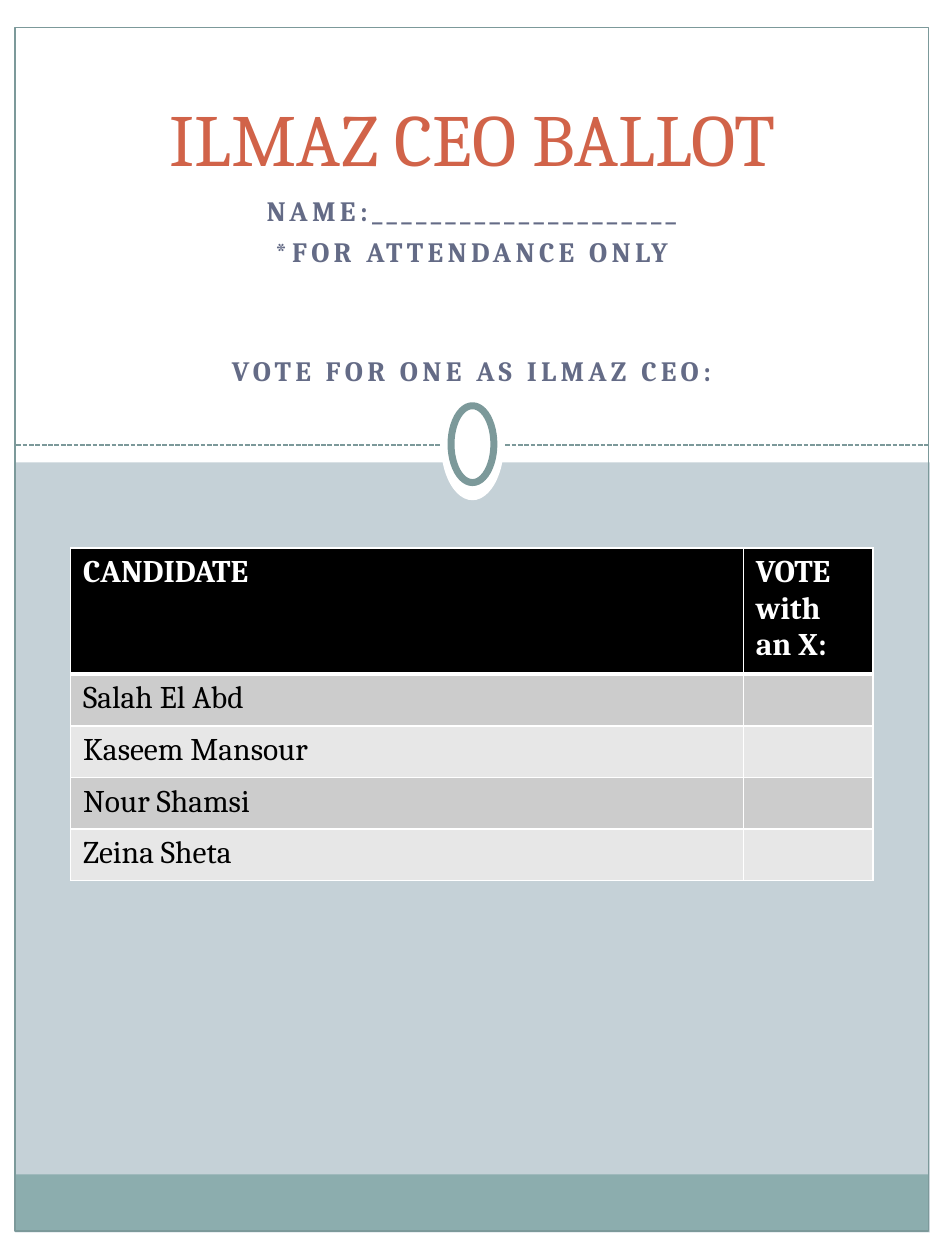
from lxml import etree
from pptx import Presentation
from pptx.dml.color import RGBColor
from pptx.enum.dml import MSO_LINE
from pptx.enum.shapes import MSO_CONNECTOR, MSO_SHAPE
from pptx.enum.text import MSO_ANCHOR, PP_ALIGN
from pptx.oxml.ns import qn
from pptx.util import Inches, Pt

RECT, OVAL = MSO_SHAPE.RECTANGLE, MSO_SHAPE.OVAL
STRAIGHT, DASH = MSO_CONNECTOR.STRAIGHT, MSO_LINE.SQUARE_DOT
TOP, BOTTOM = MSO_ANCHOR.TOP, MSO_ANCHOR.BOTTOM
CENTER = PP_ALIGN.CENTER

WHITE, BLACK = "FFFFFF", "000000"
SKY, TEAL, EDGE = "C5D1D7", "8CADAE", "7C999A"
RUST, SLATE = "D16349", "646B86"
BANDS = ("CCCCCC", "E7E7E7")


def color(code):
    return RGBColor.from_string(code)


class Page:
    font = "Cambria"

    def __init__(self, slide):
        self.slide = slide
        self.shapes = slide.shapes

    def back(self, code):
        fill = self.slide.background.fill
        fill.solid()
        fill.fore_color.rgb = color(code)

    def style(self, run, size, code, bold=False):
        look = {"name": self.font, "size": Pt(size), "bold": bold}
        for key, value in look.items():
            setattr(run.font, key, value)
        run.font.color.rgb = color(code)

    def shape(self, kind, box, fill=None, line=None, width=0):
        item = self.shapes.add_shape(kind, *map(Inches, box))
        item.shadow.inherit = False
        if fill:
            item.fill.solid()
            item.fill.fore_color.rgb = color(fill)
        else:
            item.fill.background()
        if line:
            item.line.color.rgb = color(line)
            item.line.width = Pt(width)
        else:
            item.line.fill.background()

    def rule(self, left, right, y, code, width):
        item = self.shapes.add_connector(
            STRAIGHT, Inches(left), Inches(y), Inches(right), Inches(y))
        item.line.color.rgb = color(code)
        item.line.width = Pt(width)
        item.line.dash_style = DASH
        etree.SubElement(item._element.spPr, qn("a:effectLst"))

    def text(self, box, lines, size, code, bold=False, anchor=TOP, track=0):
        frame = self.shapes.add_textbox(*map(Inches, box)).text_frame
        frame.word_wrap = True
        frame.vertical_anchor = anchor
        for i, (words, gap) in enumerate(lines):
            para = frame.add_paragraph() if i else frame.paragraphs[0]
            para.alignment = CENTER
            para.space_before = Pt(gap)
            run = para.add_run()
            run.text = words
            self.style(run, size, code, bold)
            if track:
                run.font._element.set("spc", str(int(track * 100)))

    def edges(self, cell, code, base):
        props = cell._tc.get_or_add_tcPr()
        widths = {"lnL": 1, "lnR": 1, "lnT": 1, "lnB": base}
        for i, (tag, width) in enumerate(widths.items()):
            line = etree.Element(qn("a:" + tag), w=str(Pt(width)))
            fill = etree.SubElement(line, qn("a:solidFill"))
            etree.SubElement(fill, qn("a:srgbClr"), val=code)
            props.insert(i, line)

    def table(self, box, rows, widths, heights):
        grid = self.shapes.add_table(
            len(rows), len(widths), *map(Inches, box)).table
        for col, width in zip(grid.columns, widths):
            col.width = Inches(width)
        for r, (row, height) in enumerate(zip(rows, heights)):
            grid.rows[r].height = Inches(height)
            head = r == 0
            for c, words in enumerate(row):
                cell = grid.cell(r, c)
                cell.fill.solid()
                cell.fill.fore_color.rgb = color(
                    BLACK if head else BANDS[(r - 1) % 2])
                self.edges(cell, WHITE, 3 if head else 1)
                if words:
                    run = cell.text_frame.paragraphs[0].add_run()
                    run.text = words
                    self.style(run, 18, WHITE if head else BLACK, head)


def main():
    deck = Presentation()
    deck.slide_width, deck.slide_height = Inches(7.5), Inches(10)
    page = Page(deck.slides.add_slide(deck.slide_layouts[6]))

    # Background, white margins and top panel
    page.back(SKY)
    for box in ((0, 9.78, 7.5, 0.22), (7.38, 0, 0.12, 10),
                (0, 0, 0.12, 10), (0, 0, 7.5, 3.67)):
        page.shape(RECT, box, WHITE)

    # Footer band, dashed rule, frame and ring
    page.shape(RECT, (0.12, 9.32, 7.25, 0.45), TEAL)
    page.rule(0.13, 7.37, 3.53, EDGE, 0.9)
    page.shape(RECT, (0.12, 0.22, 7.25, 9.55), line=EDGE, width=0.75)
    page.shape(OVAL, (3.5, 3.08, 0.5, 0.89), WHITE)
    page.shape(OVAL, (3.58, 3.22, 0.34, 0.61), WHITE, EDGE, 4)

    # Instructions and title
    page.text((1.12, 1.49, 5.25, 2.01),
              [("NAME:_____________________", 3.8),
               ("*FOR ATTENDANCE ONLY", 3.8),
               ("VOTE FOR ONE AS ILMAZ CEO:", 48.8)],
              16, SLATE, bold=True, track=2.5)
    page.text((0.56, 0.56, 6.38, 0.93), [("ILMAZ CEO BALLOT", 0)],
              42, RUST, anchor=BOTTOM)

    # Ballot table
    names = ("Salah El Abd", "Kaseem Mansour", "Nour Shamsi", "Zeina Sheta")
    rows = [("CANDIDATE", "VOTE with an X:")] + [(n, "") for n in names]
    page.table((0.56, 4.35, 6.38, 2.6), rows, (5.34, 1.03),
               [0.96] + [0.41] * len(names))

    deck.save("out.pptx")


if __name__ == "__main__":
    main()
